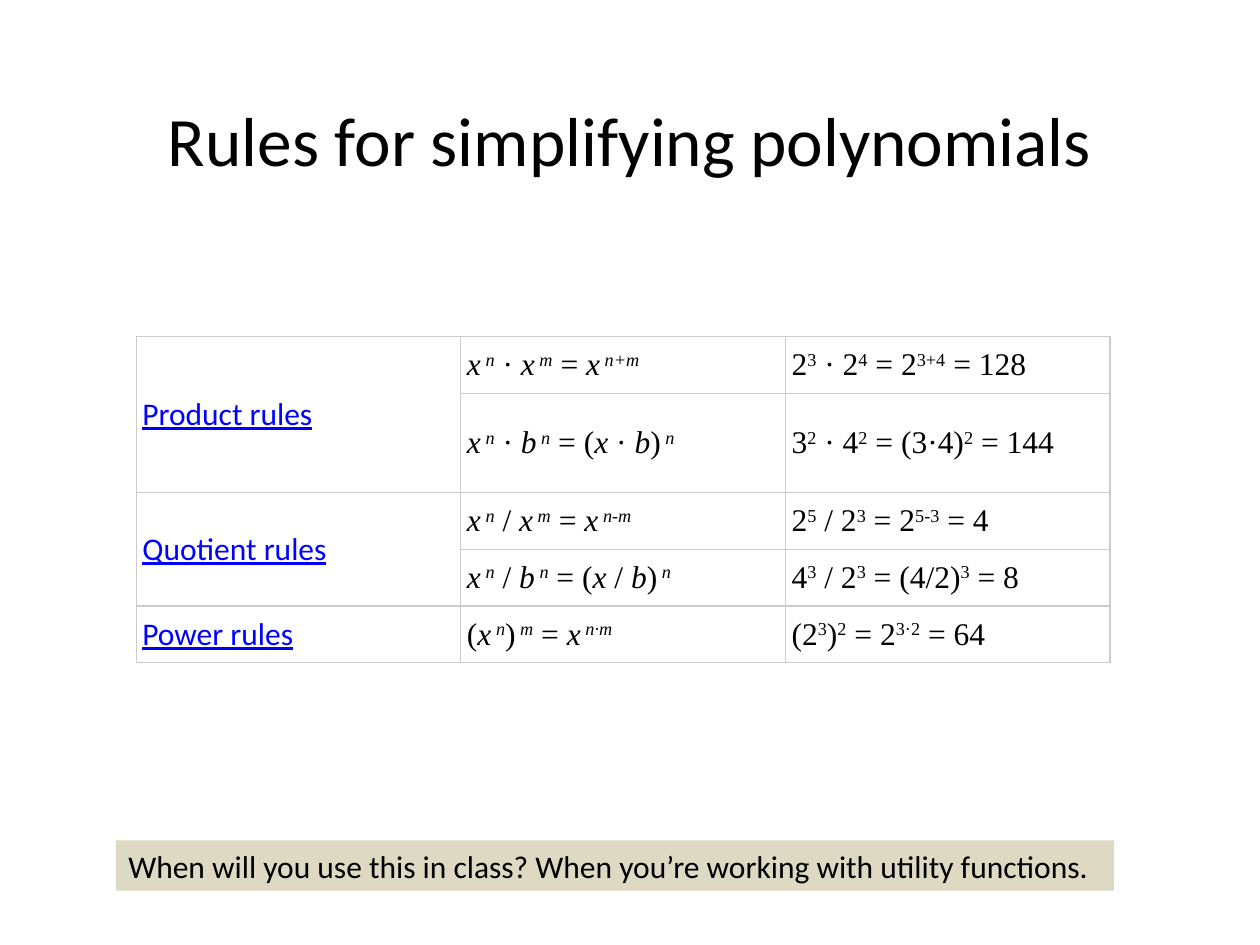
"""Build a slide that tabulates the rules for simplifying polynomials."""
from lxml import etree
from pptx import Presentation
from pptx.dml.color import RGBColor
from pptx.enum import shapes, text
from pptx.oxml import ns
from pptx.util import Inches, Pt

BLACK = RGBColor(0x00, 0x00, 0x00)
WHITE = RGBColor(0xFF, 0xFF, 0xFF)
LINK_BLUE = RGBColor(0x00, 0x00, 0xFF)
GRID_GREY = RGBColor(0xCC, 0xCC, 0xCC)
TAN = RGBColor(0xDD, 0xD9, 0xC3)


def add_run(paragraph, words, color=BLACK, **formats):
    run = paragraph.add_run()
    run.text = words
    run.font.color.rgb = color
    for name, value in ({"name": "Calibri", "size": Pt(18)} | formats).items():
        setattr(run.font, name, value)
    return run


def add_borders(cell):
    properties = cell._tc.get_or_add_tcPr()
    for side in ("a:lnL", "a:lnR", "a:lnT", "a:lnB"):
        line = etree.SubElement(properties, ns.qn(side), w=str(Pt(0.75)))
        fill = etree.SubElement(line, ns.qn("a:solidFill"))
        etree.SubElement(fill, ns.qn("a:srgbClr"), val=str(GRID_GREY))


prs = Presentation()
prs.slide_width, prs.slide_height = Inches(10), Inches(7.5)
slide = prs.slides.add_slide(prs.slide_layouts[6])

title = slide.shapes.add_textbox(Inches(0.5), Inches(0.67), Inches(9), Inches(1.25)).text_frame
title_format = {
    "word_wrap": True,
    "vertical_anchor": text.MSO_ANCHOR.MIDDLE,
    "margin_bottom": Inches(0.44),
}
for name, value in title_format.items():
    setattr(title, name, value)
title.paragraphs[0].alignment = text.PP_ALIGN.CENTER
add_run(title.paragraphs[0], "Rules for simplifying polynomials", size=Pt(39.6))

# "|" separates runs and "^" raises one
rules = [
    ("Product rules", "x|^ n| · |x|^ m| = |x|^ n+m", "2|^3| · 2|^4| = 2|^3+4| = 128"),
    ("", "x|^ n| · |b|^ n| = (|x| · |b|)|^ n", "3|^2| · 4|^2| = (3·4)|^2| = 144"),
    ("Quotient rules", "x|^ n| / |x|^ m| = |x|^ n|^-|^m", "2|^5| / 2|^3| = 2|^5-3| = 4"),
    ("", "x|^ n| / |b|^ n| = (|x| / |b|)|^ n", "4|^3| / 2|^3| = (4/2)|^3| = 8"),
    ("Power rules", "(|x|^ n|)|^ m| = |x|^ n·m", "(2|^3|)|^2| = 2|^3·2| = 64"),
]
row_heights = [0.45, 0.79, 0.45, 0.45, 0.45]
table = slide.shapes.add_table(
    len(rules), 3, Inches(1.08), Inches(2.67), Inches(7.73), Inches(2.6)
).table
table.first_row = table.horz_banding = False
for row, height in zip(table.rows, row_heights):
    row.height = Inches(height)

cell_format = dict.fromkeys(
    ("margin_left", "margin_top", "margin_right", "margin_bottom"), Inches(0.05)
)
cell_format["vertical_anchor"] = text.MSO_ANCHOR.MIDDLE
for row, (rule, *formulas) in enumerate(rules):
    for column, content in enumerate((rule, *formulas)):
        cell = table.cell(row, column)
        for name, value in cell_format.items():
            setattr(cell, name, value)
        add_borders(cell)
        cell.fill.solid()
        cell.fill.fore_color.rgb = WHITE
        paragraph = cell.text_frame.paragraphs[0]
        if column == 0:
            if rule:
                add_run(paragraph, rule, LINK_BLUE, underline=True)
            continue
        for part in content.split("|"):
            italic = any(letter.isalpha() for letter in part)
            run = add_run(paragraph, part.lstrip("^"), name="Times New Roman", italic=italic)
            if part.startswith("^"):
                run.font._element.set("baseline", "30000")
    if not rule:
        table.cell(row - 1, 0).merge(table.cell(row, 0))

note = slide.shapes.add_shape(
    shapes.MSO_SHAPE.RECTANGLE, Inches(0.92), Inches(6.67), Inches(7.92), Inches(0.4)
)
note.shadow.inherit = False
note.fill.solid()
note.fill.fore_color.rgb = TAN
note.line.fill.background()
note_format = {
    "word_wrap": True,
    "auto_size": text.MSO_AUTO_SIZE.SHAPE_TO_FIT_TEXT,
    "vertical_anchor": text.MSO_ANCHOR.TOP,
}
for name, value in note_format.items():
    setattr(note.text_frame, name, value)
question = note.text_frame.paragraphs[0]
question.alignment = text.PP_ALIGN.LEFT
add_run(question, "When will you use this in class? When you’re working with utility functions.")

prs.save("out.pptx")
